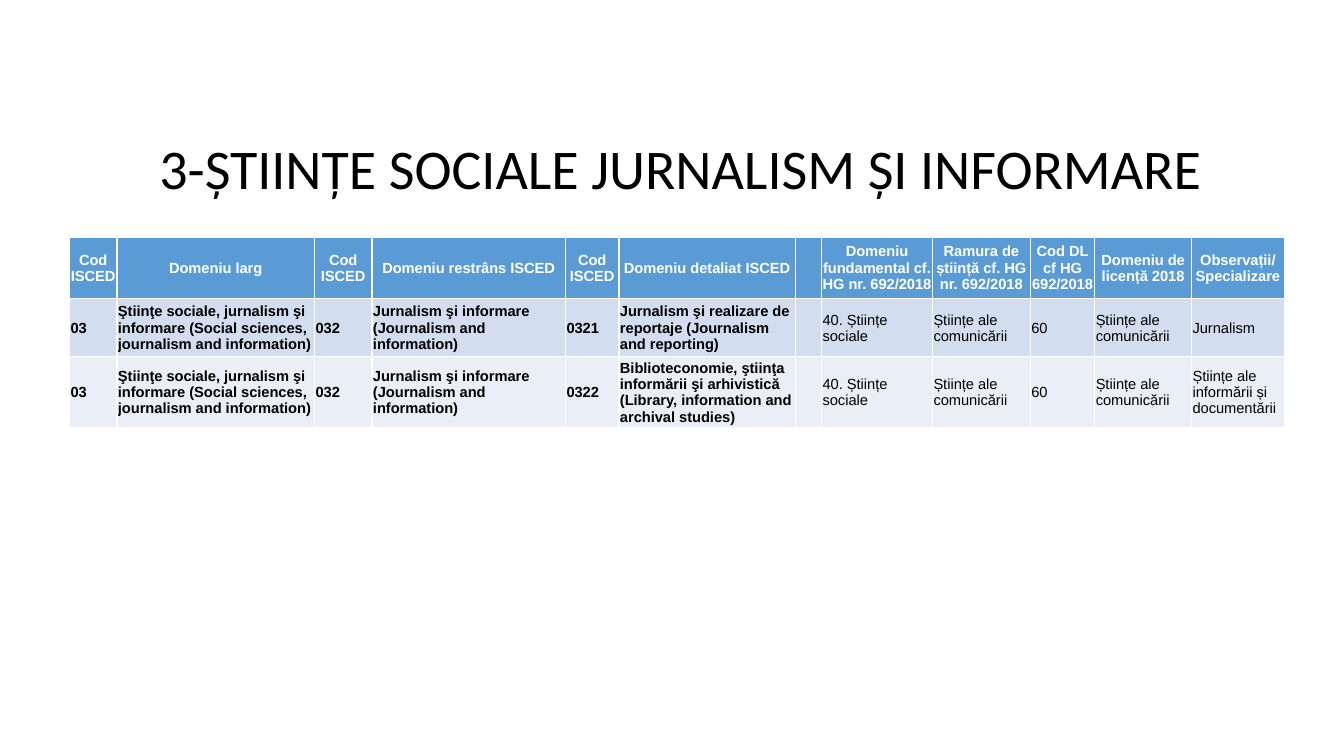
from dataclasses import dataclass

from pptx import Presentation
from pptx.dml.color import RGBColor
from pptx.enum.text import MSO_ANCHOR, PP_ALIGN
from pptx.util import Inches, Pt


@dataclass(frozen=True)
class Theme:
    title_font: str = "Calibri"
    table_font: str = "Arial"
    title_size: float = 40
    table_size: float = 10.5
    ink: str = "000000"
    header_ink: str = "FFFFFF"
    header_fill: str = "5B9BD5"
    band_fills: tuple = ("D2DEEF", "EAEFF7")


COLUMN_WIDTHS = [0.47, 1.96, 0.57, 1.92, 0.53, 1.75, 0.26, 1.1, 0.97, 0.64, 0.96, 0.92]
ROW_HEIGHTS = [0.6, 0.58, 0.7]
BOLD_COLUMNS = 6
HEADERS = [
    "Cod ISCED", "Domeniu larg", "Cod ISCED", "Domeniu restrâns ISCED",
    "Cod ISCED", "Domeniu detaliat ISCED", "",
    "Domeniu fundamental cf. HG nr. 692/2018",
    "Ramura de știință cf. HG nr. 692/2018", "Cod DL cf HG 692/2018",
    "Domeniu de licență 2018", "Observații/ Specializare",
]
BROAD_FIELD = [
    "03",
    "Ştiinţe sociale, jurnalism şi informare (Social sciences, journalism and information)",
    "032",
    "Jurnalism şi informare (Journalism and information)",
]
DEGREE_FIELD = [
    "", "40. Științe sociale", "Științe ale comunicării", "60", "Științe ale comunicării",
]
DETAILED_FIELDS = [
    ("0321", "Jurnalism şi realizare de reportaje (Journalism and reporting)", "Jurnalism"),
    ("0322",
     "Biblioteconomie, ştiinţa informării şi arhivistică "
     "(Library, information and archival studies)",
     "Științe ale informării și documentării"),
]


class SlideBuilder:
    def __init__(self, deck, theme):
        self.theme = theme
        self.page = deck.slides.add_slide(deck.slide_layouts[5])

    def apply(self, target, values):
        for name, value in values.items():
            setattr(target, name, value)

    def add_span(self, para, text, color, **font):
        span = para.add_run()
        span.text = text
        self.apply(span.font, font)
        span.font.color.rgb = RGBColor.from_string(color)

    def title(self, text, left, top, width, height):
        box = self.page.shapes.title
        self.apply(box, {
            "left": Inches(left), "top": Inches(top),
            "width": Inches(width), "height": Inches(height),
        })
        self.apply(box.text_frame, {"word_wrap": True, "vertical_anchor": MSO_ANCHOR.MIDDLE})
        para = box.text_frame.paragraphs[0]
        self.apply(para, {"alignment": PP_ALIGN.CENTER, "line_spacing": 0.9})
        self.add_span(para, text, self.theme.ink,
                      name=self.theme.title_font, size=Pt(self.theme.title_size))

    def cell(self, cell, text, fill, color, bold, alignment, margin):
        cell.fill.solid()
        cell.fill.fore_color.rgb = RGBColor.from_string(fill)
        self.apply(cell, {
            "vertical_anchor": MSO_ANCHOR.MIDDLE, "margin_bottom": 0,
            "margin_left": margin, "margin_right": margin, "margin_top": margin,
        })
        para = cell.text_frame.paragraphs[0]
        para.alignment = alignment
        if text:
            self.add_span(para, text, color, name=self.theme.table_font,
                          size=Pt(self.theme.table_size), bold=bold)

    def table(self, rows, left, top):
        table = self.page.shapes.add_table(
            len(rows), len(COLUMN_WIDTHS), Inches(left), Inches(top),
            Inches(sum(COLUMN_WIDTHS)), Inches(sum(ROW_HEIGHTS))).table
        for column, width in zip(table.columns, COLUMN_WIDTHS):
            column.width = Inches(width)
        for row, height in zip(table.rows, ROW_HEIGHTS):
            row.height = Inches(height)
        fills = (self.theme.header_fill, *self.theme.band_fills)
        for row_index, (texts, fill) in enumerate(zip(rows, fills)):
            header = row_index == 0
            for column_index, text in enumerate(texts):
                self.cell(
                    table.cell(row_index, column_index), text, fill,
                    color=self.theme.header_ink if header else self.theme.ink,
                    bold=header or column_index < BOLD_COLUMNS,
                    alignment=PP_ALIGN.CENTER if header
                    else PP_ALIGN.JUSTIFY if text in ("032", "0321") else PP_ALIGN.LEFT,
                    margin=Inches(0 if header else 0.01))


def main():
    deck = Presentation()
    deck.slide_width, deck.slide_height = Inches(13.33), Inches(7.5)
    slide = SlideBuilder(deck, Theme())
    slide.title("3-ȘTIINȚE SOCIALE JURNALISM ȘI INFORMARE ", 1.06, 1.34, 11.5, 0.72)
    body = [[*BROAD_FIELD, code, field, *DEGREE_FIELD, specialization]
            for code, field, specialization in DETAILED_FIELDS]
    slide.table([HEADERS, *body], 0.69, 2.36)
    deck.save("out.pptx")


if __name__ == "__main__":
    main()
